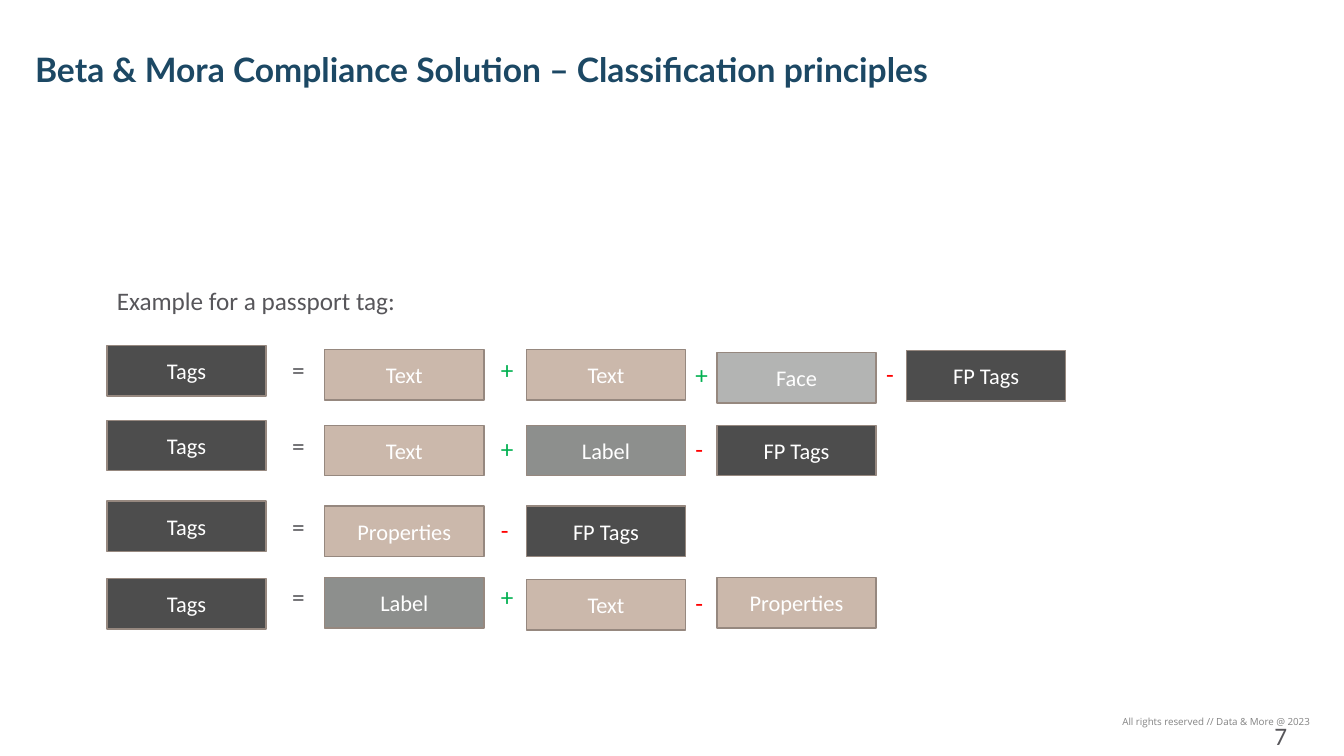
import pptx
import pptx.util
import pptx.dml.color
import pptx.enum.shapes
import pptx.enum.text

Inches = pptx.util.Inches
ALIGN = pptx.enum.text.PP_ALIGN
ANCHOR = pptx.enum.text.MSO_ANCHOR


def color(hex_code):
    return pptx.dml.color.RGBColor.from_string(hex_code)


def write(holder, words, ink, size, name="Calibri", bold=False, align=ALIGN.LEFT,
          anchor=ANCHOR.TOP, wrap=True):
    frame = holder.text_frame
    for key, value in {"word_wrap": wrap, "vertical_anchor": anchor}.items():
        setattr(frame, key, value)
    line = frame.paragraphs[0]
    line.alignment = align
    run = line.add_run()
    run.text = words
    for key, value in {"name": name, "size": pptx.util.Pt(size), "bold": bold}.items():
        setattr(run.font, key, value)
    run.font.color.rgb = color(ink)


deck = pptx.Presentation()
deck.slide_width, deck.slide_height = Inches(13.33), Inches(7.5)
shapes = deck.slides.add_slide(deck.slide_layouts[6]).shapes

GREY = "57565A"
captions = [
    ((10.99, 7.05, 2.1, 0.22), "All rights reserved // Data & More @ 2023",
     {"ink": "838383", "size": 7, "name": "Open Sans", "align": ALIGN.RIGHT, "wrap": False}),
    ((12.54, 7.1, 0.74, 0.4), "7", {"ink": GREY, "size": 18}),
    ((0.25, 0.44, 10.24, 0.86), "Beta & Mora Compliance Solution – Classification principles",
     {"ink": "1C4864", "size": 24, "name": "Lato", "bold": True}),
    ((1.06, 2.78, 4.19, 0.4), "Example for a passport tag:", {"ink": GREY, "size": 18}),
]
for place, words, style in captions:
    write(shapes.add_textbox(*map(Inches, place)), words, **style)

term_columns = [1.06, 3.22, 5.22, 7.11, 8.99]
sign_columns = [None, 2.8, 4.87, 6.8, 8.69]
term_width, term_height, sign_height = 1.58, 0.5, 0.4
term_fills = {"Tags": "4D4D4D", "FP Tags": "4D4D4D", "Text": "CBB8AB",
              "Properties": "CBB8AB", "Label": "8D8F8D", "Face": "B3B4B3"}
sign_styles = {"=": (GREY, 1.33), "+": ("00B050", 0.3), "-": ("FF0000", 0.94)}

# Each term: sign before it, sign drop, name, box drop
formulas = [
    (3.47, [("", 0, "Tags", -0.04), ("=", 0, "Text", 0), ("+", 0, "Text", 0),
            ("+", 0.05, "Face", 0.03), ("-", 0.04, "FP Tags", 0.01)]),
    (4.22, [("", 0, "Tags", -0.05), ("=", 0, "Text", 0), ("+", 0.03, "Label", 0),
            ("-", 0.03, "FP Tags", 0)]),
    (5.02, [("", 0, "Tags", -0.05), ("=", 0, "Properties", 0), ("-", 0.03, "FP Tags", 0)]),
    (5.73, [("", 0, "Tags", 0.01), ("=", -0.01, "Label", 0), ("+", -0.01, "Text", 0.02),
            ("-", 0.05, "Properties", 0)]),
]
for row_top, terms in formulas:
    for column, (sign, sign_drop, term, term_drop) in enumerate(terms):
        box = shapes.add_shape(
            pptx.enum.shapes.MSO_SHAPE.RECTANGLE, Inches(term_columns[column]),
            Inches(row_top + term_drop), Inches(term_width), Inches(term_height))
        box.shadow.inherit = False
        box.fill.solid()
        box.fill.fore_color.rgb = color(term_fills[term])
        box.line.color.rgb = color("96887F")
        box.line.width = pptx.util.Pt(1)
        write(box, term, "FFFFFF", 16, align=ALIGN.CENTER, anchor=ANCHOR.MIDDLE)
        if sign:
            ink, sign_width = sign_styles[sign]
            operator = shapes.add_textbox(
                Inches(sign_columns[column]), Inches(row_top + sign_drop),
                Inches(sign_width), Inches(sign_height))
            write(operator, sign, ink, 18)

deck.save("out.pptx")
